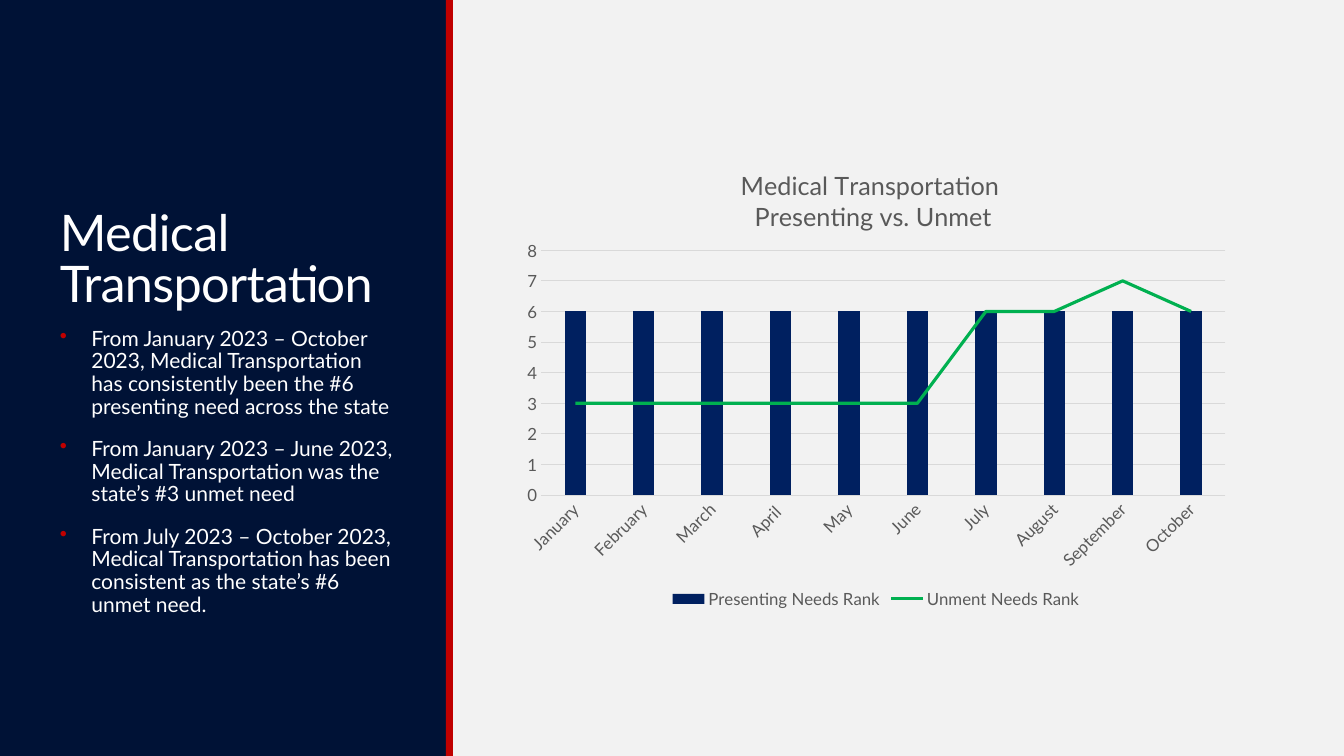
from pptx import Presentation
from pptx.chart.data import CategoryChartData as Data
from pptx.dml.color import RGBColor as RGB
from pptx.enum.chart import XL_CHART_TYPE as Kind, XL_LEGEND_POSITION as Place
from pptx.enum.chart import XL_MARKER_STYLE as Mark, XL_TICK_MARK as Tick
from pptx.enum.shapes import MSO_SHAPE as Shape
from pptx.enum.text import MSO_ANCHOR as Anchor
from pptx.oxml import parse_xml
from pptx.oxml.ns import nsdecls, qn
from pptx.util import Pt

PX = 914400 / 100.8
FACE = "Lato"
HEX = {"back": "F2F2F2", "navy": "001236", "red": "C00000", "white": "FFFFFF",
       "bar": "002060", "line": "00B050", "grid": "D9D9D9", "gray": "595959"}
INK = {name: RGB.from_string(code) for name, code in HEX.items()}


def box(*px):
    return [round(n * PX) for n in px]


def style(font, size, ink):
    font.name, font.size, font.bold = FACE, Pt(size), False
    font.color.rgb = INK[ink]


deck = Presentation()
deck.slide_width, deck.slide_height = box(1344, 756)
slide = deck.slides.add_slide(deck.slide_layouts[6])
slide.background.fill.solid()
slide.background.fill.fore_color.rgb = INK["back"]

# Side panel and its red edge
for left, width, ink in [(0, 446, "navy"), (446, 7, "red")]:
    band = slide.shapes.add_shape(Shape.RECTANGLE, *box(left, 0, width, 756))
    band.shadow.inherit = False
    band.fill.solid()
    band.fill.fore_color.rgb = INK[ink]
    band.line.fill.background()

# Title
frame = slide.shapes.add_textbox(*box(50, 66, 353, 252)).text_frame
frame.word_wrap = True
frame.vertical_anchor = Anchor.BOTTOM
para = frame.paragraphs[0]
para.line_spacing = 0.85
run = para.add_run()
run.text = "Medical Transportation"
run.font._element.set("spc", "-50")
style(para.font, 36, "white")

# Bullets
notes = [
    "From January 2023 – October 2023, Medical Transportation has consistently been the #6 presenting need across the state",
    "From January 2023 – June 2023, Medical Transportation was the state’s #3 unmet need",
    "From July 2023 – October 2023, Medical Transportation has been consistent as the state’s #6 unmet need.",
]
frame = slide.shapes.add_textbox(*box(50, 323, 353, 373)).text_frame
frame.word_wrap = True
for i, note in enumerate(notes):
    para = frame.add_paragraph() if i else frame.paragraphs[0]
    para.text = note
    para.line_spacing = 0.9
    para.space_before = Pt(12 if i else 0)
    para.space_after = Pt(2)
    props = para._p.get_or_add_pPr()
    props.set("marL", "285750")
    props.set("indent", "-285750")
    props.append(parse_xml(f'<a:buClr {nsdecls("a")}><a:srgbClr val="{HEX["red"]}"/></a:buClr>'))
    props.append(parse_xml(f'<a:buChar {nsdecls("a")} char="•"/>'))
    style(para.font, 15, "white")

# Chart data
data = Data()
data.categories = ["January", "February", "March", "April ", "May", "June",
                   "July", "August", "September", "October"]
data.add_series("Presenting Needs Rank", [6] * 10)
data.add_series("Unment Needs Rank", [3] * 6 + [6, 6, 7, 6])
chart = slide.shapes.add_chart(Kind.COLUMN_CLUSTERED, *box(512, 142, 728, 471), data).chart
style(chart.font, 12, "gray")

# Chart title and legend
chart.has_title = True
frame = chart.chart_title.text_frame
frame.text = "Medical Transportation \nPresenting vs. Unmet"
for para in frame.paragraphs:
    style(para.font, 18, "gray")
chart.has_legend = True
chart.legend.position = Place.BOTTOM
chart.legend.include_in_layout = False
style(chart.legend.font, 12, "gray")

# Axes
months, ranks = chart.category_axis, chart.value_axis
for axis in (months, ranks):
    axis.major_tick_mark = axis.minor_tick_mark = Tick.NONE
    style(axis.tick_labels.font, 12, "gray")
months._element.find(qn("c:txPr")).find(qn("a:bodyPr")).set("rot", "-2700000")
ranks.minimum_scale, ranks.maximum_scale, ranks.major_unit = 0, 8, 1
ranks.format.line.fill.background()
for line in (months.format.line, ranks.major_gridlines.format.line):
    line.color.rgb = INK["grid"]
    line.width = Pt(0.75)

# Columns, with the second series moved to a line plot
bars = chart.plots[0]
bars.gap_width = 219
bars.vary_by_categories = False
first, second = bars.series
first.format.fill.solid()
first.format.fill.fore_color.rgb = INK["bar"]
group = bars._element
ser = second._element
for flag in ser.findall(qn("c:invertIfNegative")):
    ser.remove(flag)
trend = parse_xml(f'<c:lineChart {nsdecls("c")}><c:grouping val="standard"/>'
                  '<c:varyColors val="0"/><c:marker val="1"/></c:lineChart>')
trend.insert(2, ser)
for axis in group.findall(qn("c:axId")):
    trend.append(parse_xml(f'<c:axId {nsdecls("c")} val="{axis.get("val")}"/>'))
group.addnext(trend)
unmet = chart.plots[1].series[0]
unmet.format.line.color.rgb = INK["line"]
unmet.format.line.width = Pt(2.25)
unmet.marker.style = Mark.NONE
unmet.smooth = False

# Places of the title and the plot inside the chart
area = group.getparent()
title = chart.chart_title._element
modes = '<c:xMode val="edge"/><c:yMode val="edge"/>'
plot = '<c:x val="0.04"/><c:y val="0.23"/><c:w val="0.94"/><c:h val="0.52"/>'
head = '<c:x val="0.31"/><c:y val="0.05"/>'
inner = '<c:layoutTarget val="inner"/>'
for host, spot, rule in [(area, 0, inner + modes + plot), (title, 1, modes + head)]:
    for old in host.findall(qn("c:layout")):
        host.remove(old)
    host.insert(spot, parse_xml(f'<c:layout {nsdecls("c")}><c:manualLayout>{rule}'
                                '</c:manualLayout></c:layout>'))

deck.save("out.pptx")
